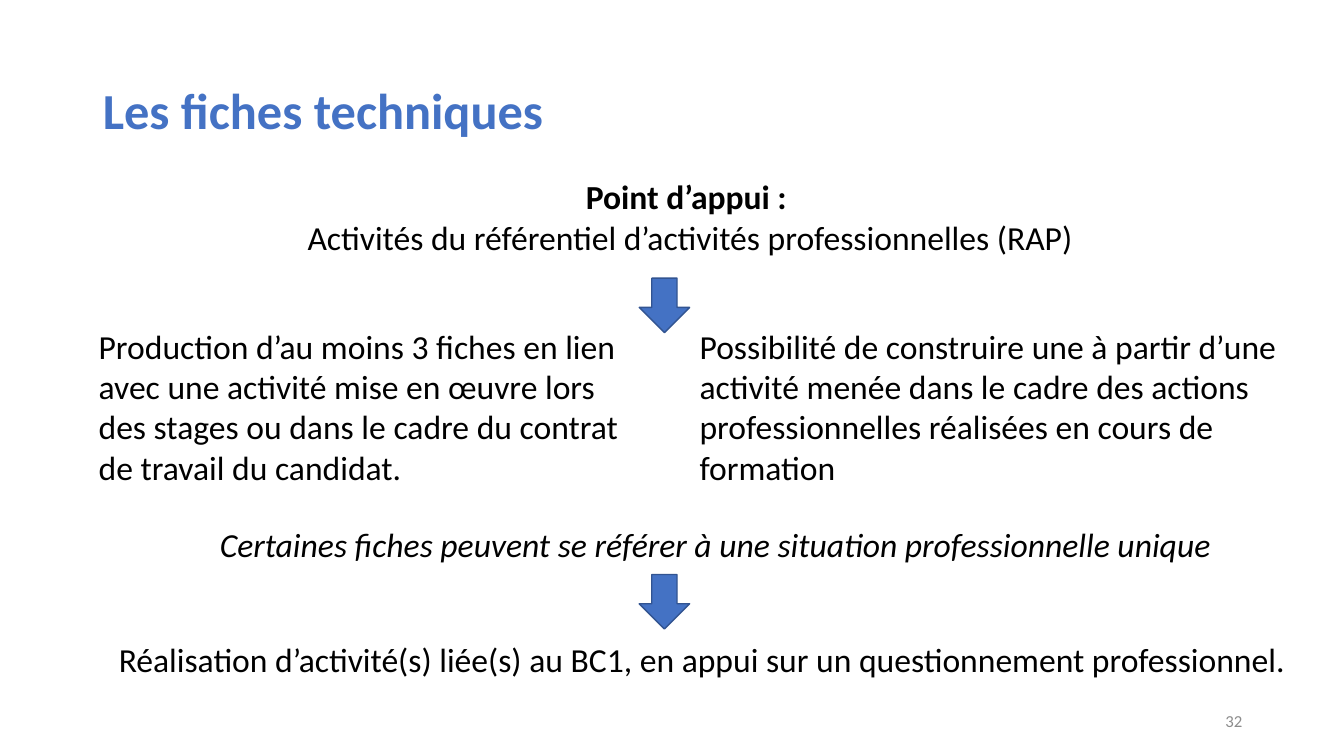
from dataclasses import dataclass

from pptx import Presentation
from pptx.dml.color import RGBColor
from pptx.enum.shapes import MSO_SHAPE
from pptx.enum.text import MSO_ANCHOR, PP_ALIGN
from pptx.util import Inches, Pt


@dataclass(frozen=True)
class Theme:
    font: str = "Calibri"
    accent: str = "4472C4"
    outline: str = "325491"
    ink: str = "000000"
    muted: str = "8C8C8C"
    title_size: int = 36
    body_size: int = 24
    number_size: int = 12


class SlideBuilder:
    def __init__(self, presentation, theme):
        self.theme = theme
        self.slide = presentation.slides.add_slide(presentation.slide_layouts[5])

    def fill_text(self, frame, lines, size, color, align=PP_ALIGN.LEFT,
                  anchor=MSO_ANCHOR.TOP, line_spacing=1.0):
        """Fill a text frame with lines, each a text and its extra font values."""
        frame.word_wrap = True
        frame.vertical_anchor = anchor
        for index, (text, extra) in enumerate(lines):
            paragraph = frame.paragraphs[0] if index == 0 else frame.add_paragraph()
            paragraph.alignment = align
            paragraph.line_spacing = line_spacing
            run = paragraph.add_run()
            run.text = text
            values = {"name": self.theme.font, "size": Pt(size), **extra}
            for name, value in values.items():
                setattr(run.font, name, value)
            run.font.color.rgb = RGBColor.from_string(color)

    def title(self, text, left, top, width, height):
        shape = self.slide.shapes.title
        box = {"left": left, "top": top, "width": width, "height": height}
        for name, value in box.items():
            setattr(shape, name, Inches(value))
        self.fill_text(shape.text_frame, [(text, {"bold": True})],
                       self.theme.title_size, self.theme.accent,
                       anchor=MSO_ANCHOR.MIDDLE, line_spacing=0.9)

    def text(self, lines, box, align=PP_ALIGN.LEFT):
        shape = self.slide.shapes.add_textbox(*map(Inches, box))
        self.fill_text(shape.text_frame, lines, self.theme.body_size,
                       self.theme.ink, align)

    def slide_number(self, number, box):
        shape = self.slide.shapes.add_textbox(*map(Inches, box))
        self.fill_text(shape.text_frame, [(str(number), {})], self.theme.number_size,
                       self.theme.muted, PP_ALIGN.RIGHT, MSO_ANCHOR.MIDDLE)

    def down_arrow(self, left, top, width=0.5, height=0.54):
        shape = self.slide.shapes.add_shape(
            MSO_SHAPE.DOWN_ARROW, *map(Inches, (left, top, width, height)))
        shape.shadow.inherit = False
        shape.fill.solid()
        shape.fill.fore_color.rgb = RGBColor.from_string(self.theme.accent)
        shape.line.color.rgb = RGBColor.from_string(self.theme.outline)
        shape.line.width = Pt(1)


def main():
    presentation = Presentation()
    presentation.slide_width = Inches(13.33)
    presentation.slide_height = Inches(7.5)
    builder = SlideBuilder(presentation, Theme())

    builder.title("Les fiches techniques", 0.92, 0.4, 11.5, 1.45)
    builder.slide_number(32, (9.42, 6.95, 3, 0.4))
    builder.text(
        [("Point d’appui : ", {"bold": True}),
         ("Activités du référentiel d’activités professionnelles (RAP)", {})],
        (1.76, 1.7, 10.17, 0.91), PP_ALIGN.CENTER)
    builder.text(
        [("Production d’au moins 3 fiches en lien avec une activité mise en œuvre "
          "lors des stages ou dans le cadre du contrat de travail du candidat.", {})],
        (0.88, 3.18, 5.62, 1.72))
    builder.text(
        [("Possibilité de construire une à partir d’une activité menée dans le cadre "
          "des actions professionnelles réalisées en cours de formation", {})],
        (6.84, 3.18, 6.31, 1.72))
    builder.text(
        [("Certaines fiches peuvent se référer à une situation professionnelle unique",
          {"italic": True})],
        (1.48, 5.15, 11.23, 0.5), PP_ALIGN.CENTER)
    builder.text(
        [("Réalisation d’activité(s) liée(s) au BC1, en appui sur un "
          "questionnement professionnel.", {})],
        (1.08, 6.29, 12.03, 0.5))
    for top in (2.76, 5.7):
        builder.down_arrow(6.34, top)

    presentation.save("out.pptx")


if __name__ == "__main__":
    main()
